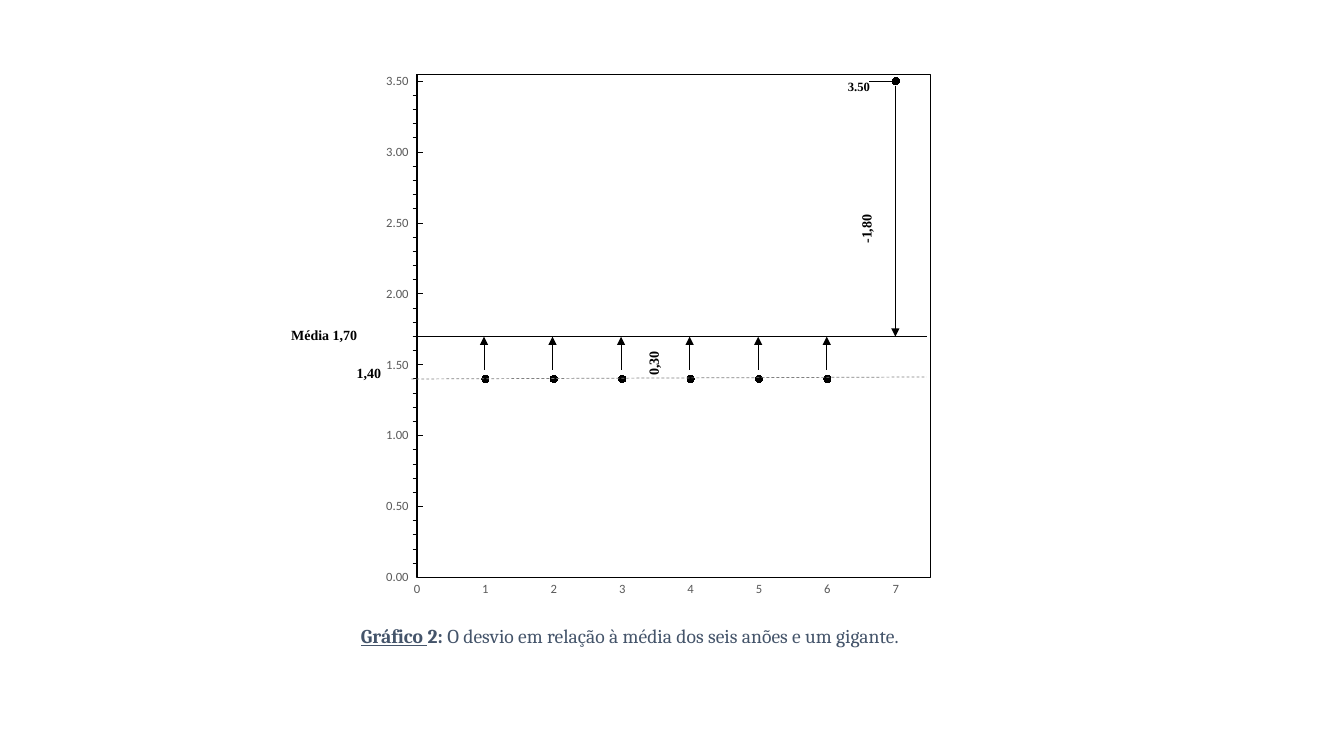
import pptx
import pptx.chart.data
import pptx.dml.color
import pptx.enum.chart
import pptx.enum.dml
import pptx.enum.shapes
import pptx.oxml
import pptx.oxml.ns
import pptx.util
from pptx.util import Inches

HEIGHTS = [1.4] * 6 + [3.5]
BLACK, GREY, SLATE = "000000", "595959", "44546A"
PLOT_X, PLOT_Y, PLOT_WIDTH, PLOT_HEIGHT = 0.091, 0.037, 0.833, 0.895
CHART_BOX = (3.58, 0.53, 6.11, 5.58)
CAPTION_BOX = (3.58, 6.19, 6.11, 0.24)


def color(value):
    return pptx.dml.color.RGBColor.from_string(value)


def chart_xml(markup):
    return pptx.oxml.parse_xml(markup.replace(
        ">", " " + pptx.oxml.ns.nsdecls("c", "a") + ">", 1))


def manual_layout(left, top, size=""):
    return chart_xml(
        f'<c:layout><c:manualLayout>{size and "<c:layoutTarget val=%sinner%s/>" % (chr(34), chr(34))}'
        f'{size and "<c:xMode val=%sedge%s/><c:yMode val=%sedge%s/>" % ((chr(34),) * 4)}'
        f'<c:x val="{left}"/><c:y val="{top}"/>{size}</c:manualLayout></c:layout>')


def style_font(font, name, size, value, bold=False):
    font.name, font.size, font.bold = name, pptx.util.Pt(size), bold
    font.color.rgb = color(value)


def style_axis(axis, maximum, major_unit, number_format):
    axis.minimum_scale, axis.maximum_scale = 0, maximum
    axis.major_unit = major_unit
    axis.has_major_gridlines = axis.has_minor_gridlines = False
    axis.major_tick_mark = pptx.enum.chart.XL_TICK_MARK.NONE
    axis.minor_tick_mark = pptx.enum.chart.XL_TICK_MARK.NONE
    axis.tick_labels.number_format = number_format
    axis.tick_labels.number_format_is_linked = False
    style_font(axis.tick_labels.font, "Calibri", 9, GREY)


def style_plot_area(chart):
    plot_area = chart._chartSpace.chart.plotArea
    for layout in plot_area.findall(pptx.oxml.ns.qn("c:layout")):
        plot_area.remove(layout)
    size = f'<c:w val="{PLOT_WIDTH}"/><c:h val="{PLOT_HEIGHT}"/>'
    plot_area.insert(0, manual_layout(PLOT_X, PLOT_Y, size))
    plot_area.append(chart_xml(
        '<c:spPr><a:noFill/><a:ln w="9525"><a:solidFill>'
        f'<a:srgbClr val="{BLACK}"/></a:solidFill></a:ln></c:spPr>'))


def label_giant(chart, series):
    """Label only the last point, a little to the left of its marker."""
    label = series.points[len(HEIGHTS) - 1].data_label
    style_font(label.font, "Times New Roman", 9, BLACK, bold=True)
    label.position = pptx.enum.chart.XL_LABEL_POSITION.LEFT
    index = chart._chartSpace.xpath(".//c:dLbl/c:idx")[0]
    index.addnext(chart_xml('<c:numFmt formatCode="0.00" sourceLinked="0"/>'.replace("/>", "></c:numFmt>")))
    index.addnext(manual_layout(-0.03, 0.01))
    for show_value in chart._chartSpace.xpath(".//c:dLbls/c:showVal"):
        show_value.set("val", "0")


def add_height_chart(slide, box):
    data = pptx.chart.data.XyChartData(number_format="0.00")
    points = data.add_series("Series 1")
    for number, height in enumerate(HEIGHTS, 1):
        points.add_data_point(number, height)
    chart = slide.shapes.add_chart(
        pptx.enum.chart.XL_CHART_TYPE.XY_SCATTER, *map(Inches, box), data).chart
    chart.has_legend = chart.has_title = False
    style_font(chart.font, "Calibri", 10, BLACK)
    chart.plots[0].vary_by_categories = False

    style_axis(chart.category_axis, 7.5, 1, "General")
    chart.category_axis.format.line.fill.background()
    axis = chart.value_axis
    style_axis(axis, 3.55, 0.5, "0.00")
    axis.minor_unit = 0.1
    axis.major_tick_mark = pptx.enum.chart.XL_TICK_MARK.INSIDE
    axis.minor_tick_mark = pptx.enum.chart.XL_TICK_MARK.OUTSIDE
    axis.format.line.color.rgb = color(BLACK)
    axis.format.line.width = pptx.util.Pt(0.75)

    series = chart.plots[0].series[0]
    series.format.line.fill.background()
    series.marker.style = pptx.enum.chart.XL_MARKER_STYLE.CIRCLE
    series.marker.size = 5
    series.marker.format.fill.solid()
    series.marker.format.fill.fore_color.rgb = color(BLACK)
    series.marker.format.line.color.rgb = color(BLACK)
    style_plot_area(chart)
    label_giant(chart, series)


def add_line(slide, start, end, width=0.5, value=BLACK, arrow=False, dashed=False):
    connector = slide.shapes.add_connector(
        pptx.enum.shapes.MSO_CONNECTOR.STRAIGHT, *map(Inches, start + end))
    connector.line.width = pptx.util.Pt(width)
    connector.line.color.rgb = color(value)
    if dashed:
        connector.line.dash_style = pptx.enum.dml.MSO_LINE.DASH
    properties = connector._element.spPr
    if arrow:
        line = properties.find(pptx.oxml.ns.qn("a:ln"))
        line.append(line.makeelement(pptx.oxml.ns.qn("a:tailEnd"), {"type": "triangle"}))
    properties.append(properties.makeelement(pptx.oxml.ns.qn("a:effectLst"), {}))


def add_deviation_lines(slide, box):
    """Draw the mean, the dwarfs' level and one arrow from each point to the mean."""
    left, top = box[0], box[1]
    mean_y = top + 2.81
    add_line(slide, (left + 0.5, top + 3.23), (left + 5.61, top + 3.21),
             value="808080", dashed=True)
    add_line(slide, (left + 0.55, mean_y), (left + 5.61, mean_y), width=0.75)
    for number, height in enumerate(HEIGHTS, 1):
        x = left + 0.54 + 0.68 * number
        start_y = top + (0.32 if height > 1.7 else 3.14)
        add_line(slide, (x, start_y), (x, mean_y), arrow=True)


def add_note(slide, text, left, top, width, height, rotation=0):
    note = slide.shapes.add_textbox(*map(Inches, (left, top, width, height)))
    note.rotation = rotation
    note.text_frame.word_wrap = True
    paragraph = note.text_frame.paragraphs[0]
    paragraph.line_spacing = 1.07
    paragraph.space_after = pptx.util.Pt(8)
    run = paragraph.add_run()
    run.text = text
    style_font(run.font, "Times New Roman", 10, BLACK, bold=True)


def add_notes(slide, box):
    left, top = box[0], box[1]
    add_note(slide, "0,30", left + 2.69, top + 2.75, 0.61, 0.48, rotation=270)
    add_note(slide, "Média 1,70", left - 0.79, top + 2.65, 1.38, 0.39)
    add_note(slide, "-1,80", left + 4.85, top + 1.36, 0.64, 0.61, rotation=270)
    add_note(slide, "1,40", left - 0.14, top + 3.03, 0.76, 0.39)


def add_caption(slide, box):
    caption = slide.shapes.add_textbox(*map(Inches, box))
    caption.fill.solid()
    caption.fill.fore_color.rgb = color("FFFFFF")
    frame = caption.text_frame
    frame.word_wrap = True
    frame.margin_left = frame.margin_right = frame.margin_top = frame.margin_bottom = 0
    paragraph = frame.paragraphs[0]
    paragraph.space_after = pptx.util.Pt(10)
    for text, bold, underline in (
            ("Gráfico ", True, True), ("2:", True, False),
            (" O desvio em relação à média dos seis anões e um gigante.", False, False)):
        run = paragraph.add_run()
        run.text = text
        style_font(run.font, "Cambria", 14, SLATE, bold)
        run.font.underline = underline


def main():
    presentation = pptx.Presentation()
    presentation.slide_width, presentation.slide_height = Inches(13.33), Inches(7.5)
    slide = presentation.slides.add_slide(presentation.slide_layouts[6])
    add_height_chart(slide, CHART_BOX)
    add_deviation_lines(slide, CHART_BOX)
    add_notes(slide, CHART_BOX)
    add_caption(slide, CAPTION_BOX)
    presentation.save("out.pptx")


if __name__ == "__main__":
    main()
